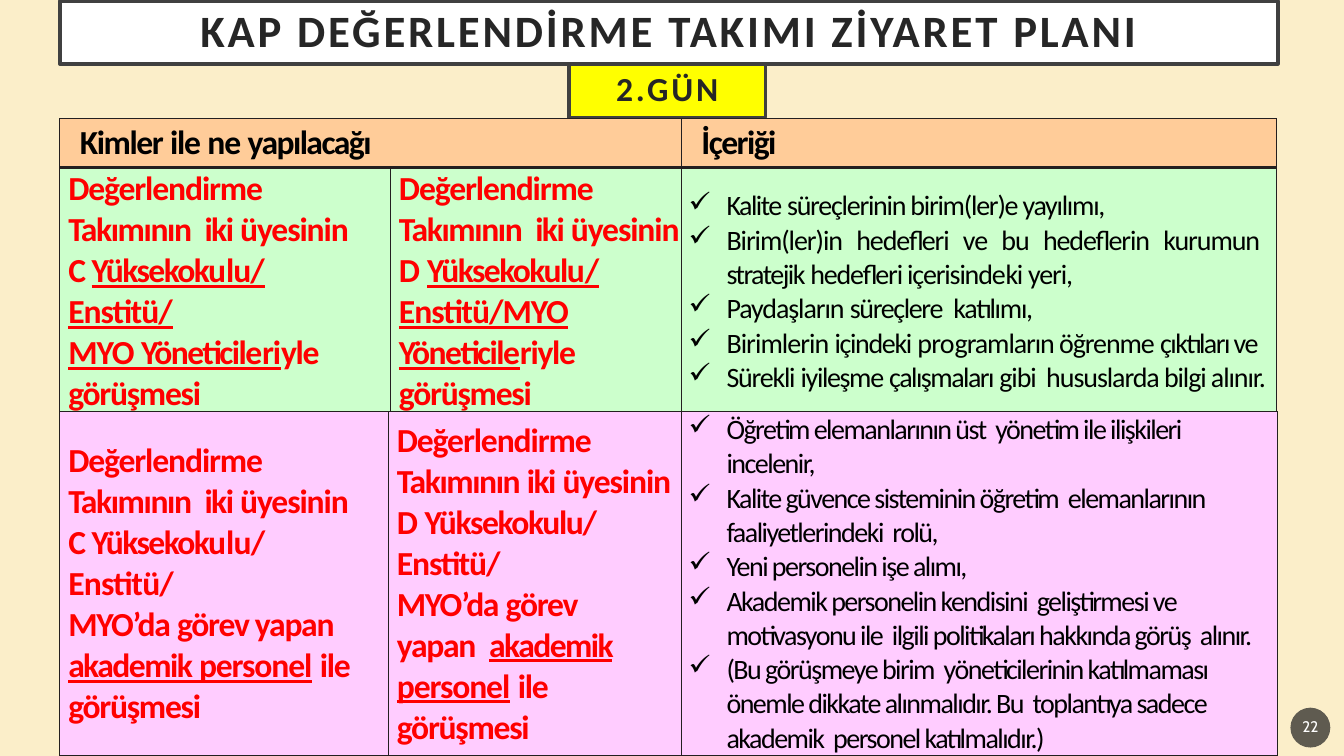
from lxml.etree import SubElement
from pptx import Presentation
from pptx.dml.color import RGBColor
from pptx.enum.shapes import MSO_SHAPE
from pptx.enum.text import MSO_ANCHOR, PP_ALIGN
from pptx.oxml.ns import qn
from pptx.util import Pt

PX = 9525  # EMU in one px, 96 px to the inch

THEME = {
    "background": "FBEEC9", "border": "231F20", "frame": "404040",
    "header": "FFCC99", "green": "CCFFCC", "pink": "FFCCFF",
    "white": "FFFFFF", "yellow": "FFFF00", "badge": "1D1D1D",
}
STYLES = {
    "title": {"name": "Calibri", "size": Pt(32), "bold": True, "color": "262626"},
    "day": {"name": "Calibri", "size": Pt(24), "bold": True, "color": "262626"},
    "number": {"name": "Cabin", "size": Pt(11), "bold": False, "color": "FFFFFF"},
    "header": {"name": "Calibri", "size": Pt(24), "bold": True, "color": "000000"},
    "visit": {"name": "Calibri", "size": Pt(24), "bold": True, "color": "FF0000"},
    "topic": {"name": "Calibri", "size": Pt(20), "bold": False, "color": "000000"},
}
# Left margin and first-line indent of table paragraphs, px
INDENTS = {"header": (19, 0), "visit": (8, 0), "topic": (43, -36)}


def add_runs(paragraph, runs, style):
    """Each run is (text, letter spacing in points, optional underline)."""
    for text, spacing, *underline in runs:
        run = paragraph.add_run()
        run.text = text
        for attribute, value in STYLES[style].items():
            if attribute == "color":
                run.font.color.rgb = RGBColor.from_string(value)
            else:
                setattr(run.font, attribute, value)
        run.font.underline = bool(underline)
        run.font._element.set("spc", str(round(spacing * 100)))


def fill_cell(cell, style, color, paragraphs, right_margins, align):
    cell.vertical_anchor = MSO_ANCHOR.MIDDLE
    cell.margin_left = cell.margin_right = cell.margin_bottom = 0
    cell.margin_top = PX
    properties = cell._tc.get_or_add_tcPr()
    for side in ("lnL", "lnR", "lnT", "lnB"):
        line = SubElement(properties, qn(f"a:{side}"), w=str(Pt(1)))
        solid = SubElement(line, qn("a:solidFill"))
        SubElement(solid, qn("a:srgbClr"), val=THEME["border"])
    cell.fill.solid()
    cell.fill.fore_color.rgb = RGBColor.from_string(THEME[color])

    left, first_line = INDENTS[style]
    frame = cell.text_frame
    for index, runs in enumerate(paragraphs):
        paragraph = frame.add_paragraph() if index else frame.paragraphs[0]
        paragraph.alignment = align
        layout = paragraph._p.get_or_add_pPr()
        margins = {"marL": left, "indent": first_line, "marR": right_margins.get(index, 0)}
        for name, value in margins.items():
            layout.set(name, str(value * PX))
        if style == "topic":
            SubElement(layout, qn("a:buChar"), char="✓")
        add_runs(paragraph, runs, style)


presentation = Presentation()
presentation.slide_width, presentation.slide_height = 1280 * PX, 720 * PX
slide = presentation.slides.add_slide(presentation.slide_layouts[6])
slide.background.fill.solid()
slide.background.fill.fore_color.rgb = RGBColor.from_string(THEME["background"])

# Title, day label and page number
labels = [
    ("title", MSO_SHAPE.RECTANGLE, (57, 1, 1160, 60), "white",
     "KAP DEĞERLENDİRME TAKIMI ZİYARET PLANI", 2),
    ("day", MSO_SHAPE.RECTANGLE, (542, 61, 187, 51), "yellow", "2.GÜN", 2),
    ("number", MSO_SHAPE.OVAL, (1229, 674, 38, 38), "badge", "22", 0),
]
for style, kind, box, color, text, spacing in labels:
    shape = slide.shapes.add_shape(kind, *(value * PX for value in box))
    shape.shadow.inherit = False
    shape.fill.solid()
    shape.fill.fore_color.rgb = RGBColor.from_string(THEME[color])
    if style == "number":
        color_node = shape.fill._xPr.find(qn("a:solidFill"))[0]
        SubElement(color_node, qn("a:alpha"), val="70000")
        shape.line.fill.background()
    else:
        shape.line.color.rgb = RGBColor.from_string(THEME["frame"])
        shape.line.width = Pt(2.5)
    frame = shape.text_frame
    frame.word_wrap = True
    frame.vertical_anchor = MSO_ANCHOR.MIDDLE
    for side in ("left", "right", "top", "bottom"):
        setattr(frame, f"margin_{side}", 0)
    paragraph = frame.paragraphs[0]
    paragraph.alignment = PP_ALIGN.CENTER
    paragraph.line_spacing = 0.9
    add_runs(paragraph, [(text, spacing)], style)

# Wording shared by the visit cells
evaluators = ("Değerlendirme ", -0.8)
two_members = [("iki ", -1.1), ("üyesinin", -0.8)]
opening = [evaluators, ("Takımının  ", -1), *two_members]
staff_meeting = [("MYO’da ", -1), ("görev yapan  ", -0.9), ("akademik ", -1.1, True),
                 ("personel", -0.8, True), (" ", -0.8), ("ile görüşmesi", -0.9)]

header_cells = [
    ("header", [[("Kimler ", -1), ("ile ", -0.9), ("ne ", -0.8), ("yapılacağı", -1.1)]], {}),
    ("header", [[("İçeriği", -1.1)]], {}),
]
manager_cells = [
    ("visit", [
        opening,
        [("C ", -1.5), ("Yüksekoku", -1.1, True), ("lu/", -0.7, True)],
        [("Enstitü/", -0.7, True)],
        [("MYO ", -0.7, True), ("Yöneticile", -1.1, True), ("ri", -0.9, True),
         ("yle görüşmesi", -0.9)],
    ], {}),
    ("visit", [
        opening,
        [("D ", -0.5), ("Yüksekokulu", -1.1, True), ("/", -0.7, True)],
        [("Enstitü/MYO ", -0.7, True), ("Yöneticile", -1.1, True), ("riyle görüşmesi", -0.9)],
    ], {}),
    ("topic", [
        [("Kalite ", -1.1), ("süreçlerinin birim(ler)e yayılımı,", -0.9)],
        [("Birim(ler)in hedefleri ve bu hedeflerin kurumun ", -0.8), ("stratejik ", -1.1),
         ("hedefleri içerisinde", -0.85), ("ki ", -1.1), ("yeri,", -0.8)],
        [("Paydaşların ", -0.8), ("süreçlere  ", -1), ("katılımı,", -0.9)],
        [("Birimlerin ", -0.7), ("içindeki ", -1), ("pro", -0.5),
         ("gramların öğrenme ", -0.8), ("çıktıları ve", -1.1)],
        [("Sürekli ", -0.9), ("iyileşme ", -1), ("çalışmaları ", -1.1),
         ("gibi  hususlarda bilgi alınır.", -0.8)],
    ], {1: 17}),
]
staff_cells = [
    ("visit", [
        opening,
        [("C ", -1.5), ("Yüksekoku", -1.1), ("lu/", -0.6)],
        [("Enstitü/", -0.6)],
        staff_meeting,
    ], {}),
    ("visit", [
        [evaluators, ("Takımının ", -1), *two_members],
        [("D ", -0.8), ("Yüksekokulu/ ", -1), ("Enstitü/", -0.8)],
        staff_meeting,
    ], {2: 30}),
    ("topic", [[(text, -1.1)] for text in (
        "Öğretim elemanlarının üst  yönetim ile ilişkileri incelenir,",
        "Kalite güvence sisteminin öğretim  elemanlarının faaliyetlerindeki  rolü,",
        "Yeni personelin işe alımı,",
        "Akademik personelin kendisini  geliştirmesi ve motivasyonu ile  ilgili "
        "politikaları hakkında görüş  alınır.",
        "(Bu görüşmeye birim  yöneticilerinin katılmaması önemle dikkate alınmalıdır. "
        "Bu  toplantıya sadece akademik  personel katılmalıdır.)",
    )], dict.fromkeys(range(5), 8)),
]

# One single-row table per band: top, height, column widths, fill, topic alignment, cells
bands = [
    (113, 46, (592, 567), "header", PP_ALIGN.LEFT, header_cells),
    (160, 231, (315, 277, 567), "green", PP_ALIGN.JUSTIFY, manager_cells),
    (392, 328, (313, 279, 568), "pink", PP_ALIGN.LEFT, staff_cells),
]
for top, height, widths, color, topic_align, cells in bands:
    table = slide.shapes.add_table(
        1, len(widths), 57 * PX, top * PX, sum(widths) * PX, height * PX).table
    table.first_row = table.horz_banding = False
    for column, width in enumerate(widths):
        table.columns[column].width = width * PX
        style, paragraphs, right_margins = cells[column]
        align = topic_align if style == "topic" else PP_ALIGN.LEFT
        fill_cell(table.cell(0, column), style, color, paragraphs, right_margins, align)
    if color == "green":
        topics = table.cell(0, 2).text_frame
        topics.paragraphs[0].space_before = Pt(12)

presentation.save("out.pptx")
